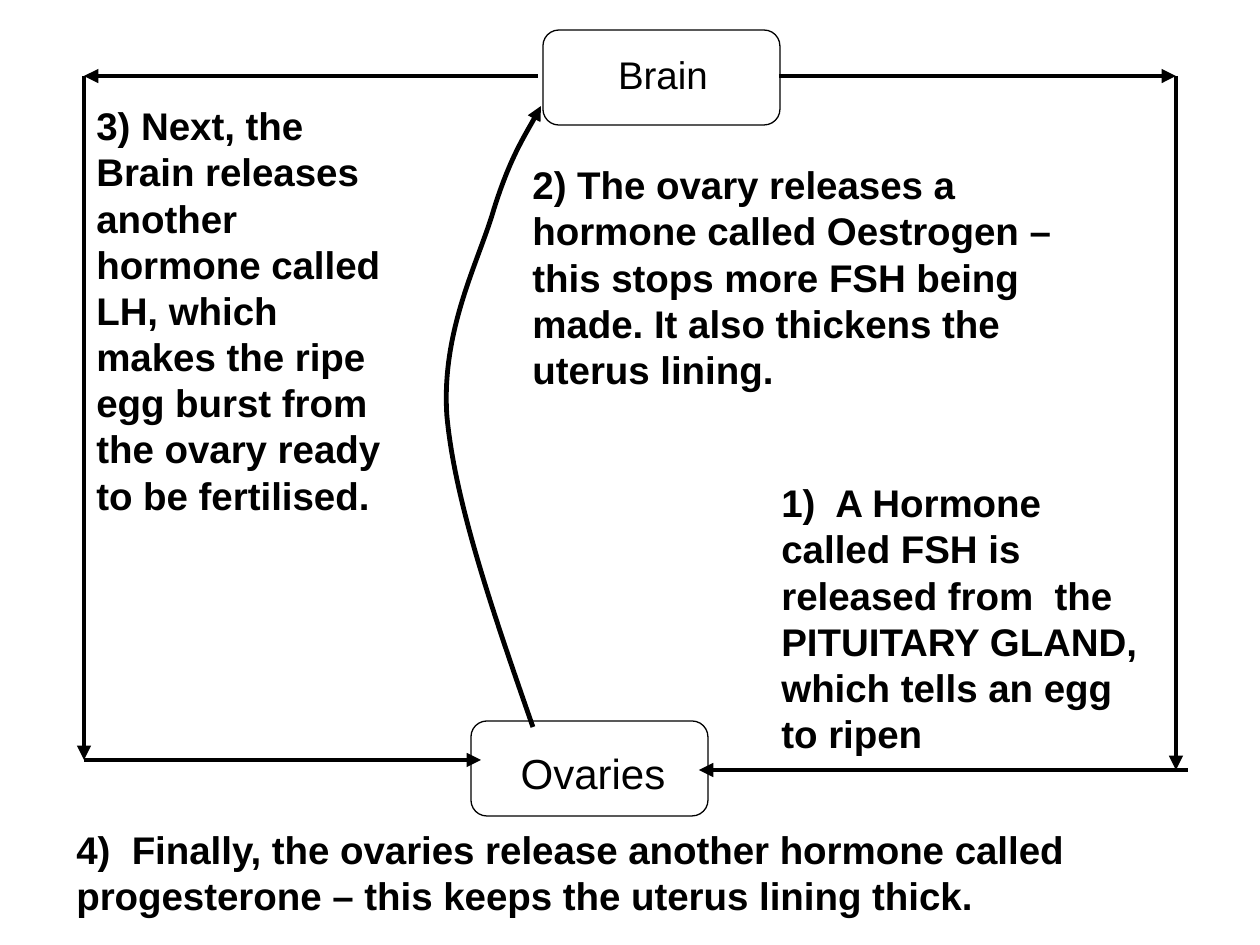
from lxml.etree import SubElement
from pptx import Presentation
from pptx.dml.color import RGBColor
from pptx.enum.shapes import MSO_CONNECTOR, MSO_SHAPE
from pptx.enum.text import MSO_ANCHOR, PP_ALIGN
from pptx.oxml.ns import qn
from pptx.util import Emu, Pt

PX = 914400 / 126
BLACK, WHITE = "000000", "FFFFFF"


def px(length):
    return Emu(round(length * PX))


def colour(value):
    return RGBColor.from_string(value)


def apply(target, values):
    for name, value in values.items():
        setattr(target, name, value)


class CycleSlide:
    font = {"name": "Arial", "size": Pt(22)}
    arrow_width = Pt(2.75)

    def __init__(self, slide):
        self.shapes = slide.shapes

    def box(self, left, top, width, height):
        box = self.shapes.add_shape(MSO_SHAPE.ROUNDED_RECTANGLE,
                                    *map(px, (left, top, width, height)))
        box.shadow.inherit = False
        box.fill.solid()
        box.fill.fore_color.rgb = colour(WHITE)
        box.line.color.rgb = colour(BLACK)
        box.line.width = Pt(0.75)

    def text(self, words, left, top, width, height,
             align=PP_ALIGN.LEFT, **font):
        frame = self.shapes.add_textbox(
            *map(px, (left, top, width, height))).text_frame
        apply(frame, {"word_wrap": True, "vertical_anchor": MSO_ANCHOR.TOP})
        paragraph = frame.paragraphs[0]
        paragraph.alignment = align
        run = paragraph.add_run()
        run.text = words
        apply(run.font, {**self.font, **font})
        run.font.color.rgb = colour(BLACK)

    def arrow_line(self, shape):
        shape.line.color.rgb = colour(BLACK)
        shape.line.width = self.arrow_width
        SubElement(shape.line._get_or_add_ln(), qn("a:tailEnd"),
                   type="triangle")

    def arrow(self, start, end):
        arrow = self.shapes.add_connector(MSO_CONNECTOR.STRAIGHT,
                                          *map(px, start + end))
        self.arrow_line(arrow)
        SubElement(arrow._element.spPr, qn("a:effectLst"))

    def curved_arrow(self, start, points):
        builder = self.shapes.build_freeform(*start, scale=PX)
        builder.add_line_segments(points, close=False)
        curve = builder.convert_to_shape()
        curve.shadow.inherit = False
        curve.fill.background()
        self.arrow_line(curve)
        # Every three points become one Bézier segment
        outline = next(curve._element.iter(qn("a:path")))
        steps = outline.findall(qn("a:lnTo"))
        for first in range(0, len(steps), 3):
            bezier = SubElement(outline, qn("a:cubicBezTo"))
            for step in steps[first:first + 3]:
                bezier.append(step[0])
                outline.remove(step)


def main():
    deck = Presentation()
    apply(deck, {"slide_width": px(1260), "slide_height": px(945)})
    cycle = CycleSlide(deck.slides.add_slide(deck.slide_layouts[6]))

    # Organs
    cycle.box(543, 30, 237, 95)
    cycle.text("Brain", 561, 45, 204, 63, PP_ALIGN.CENTER)
    cycle.box(471, 721, 237, 95)
    cycle.text("Ovaries", 491, 741, 204, 63, PP_ALIGN.CENTER, size=Pt(24))

    # Hormone routes around both sides
    left, right, top = 84, 1176, 76
    left_foot, right_foot = 760, 770
    for start, end in [
        ((779, top), (right, top)),
        ((1188, right_foot), (699, right_foot)),
        ((right, top), (right, right_foot)),
        ((538, top), (left, top)),
        ((left, top), (left, left_foot)),
        ((left, left_foot), (481, left_foot)),
    ]:
        cycle.arrow(start, end)

    # Feedback from ovaries to brain
    cycle.curved_arrow((533, 727), [
        (494, 615), (455, 503), (447, 416),
        (441, 330), (479, 261), (494, 209),
        (510, 158), (533, 122), (541, 106),
    ])

    # Steps
    for words, *place in [
        ("1)  A Hormone called FSH is released from  the PITUITARY GLAND, "
         "which tells an egg to ripen", 769, 473, 397, 290),
        ("2) The ovary releases a hormone called Oestrogen – this stops more "
         "FSH being made. It also thickens the uterus lining.",
         520, 155, 586, 243),
        ("3) Next, the Brain releases another hormone called LH, which makes "
         "the ripe egg burst from the ovary ready to be fertilised.",
         84, 96, 328, 428),
        ("4)  Finally, the ovaries release another hormone called "
         "progesterone – this keeps the uterus lining thick.",
         64, 820, 1160, 105),
    ]:
        cycle.text(words, *place, bold=True)

    deck.save("out.pptx")


if __name__ == "__main__":
    main()
